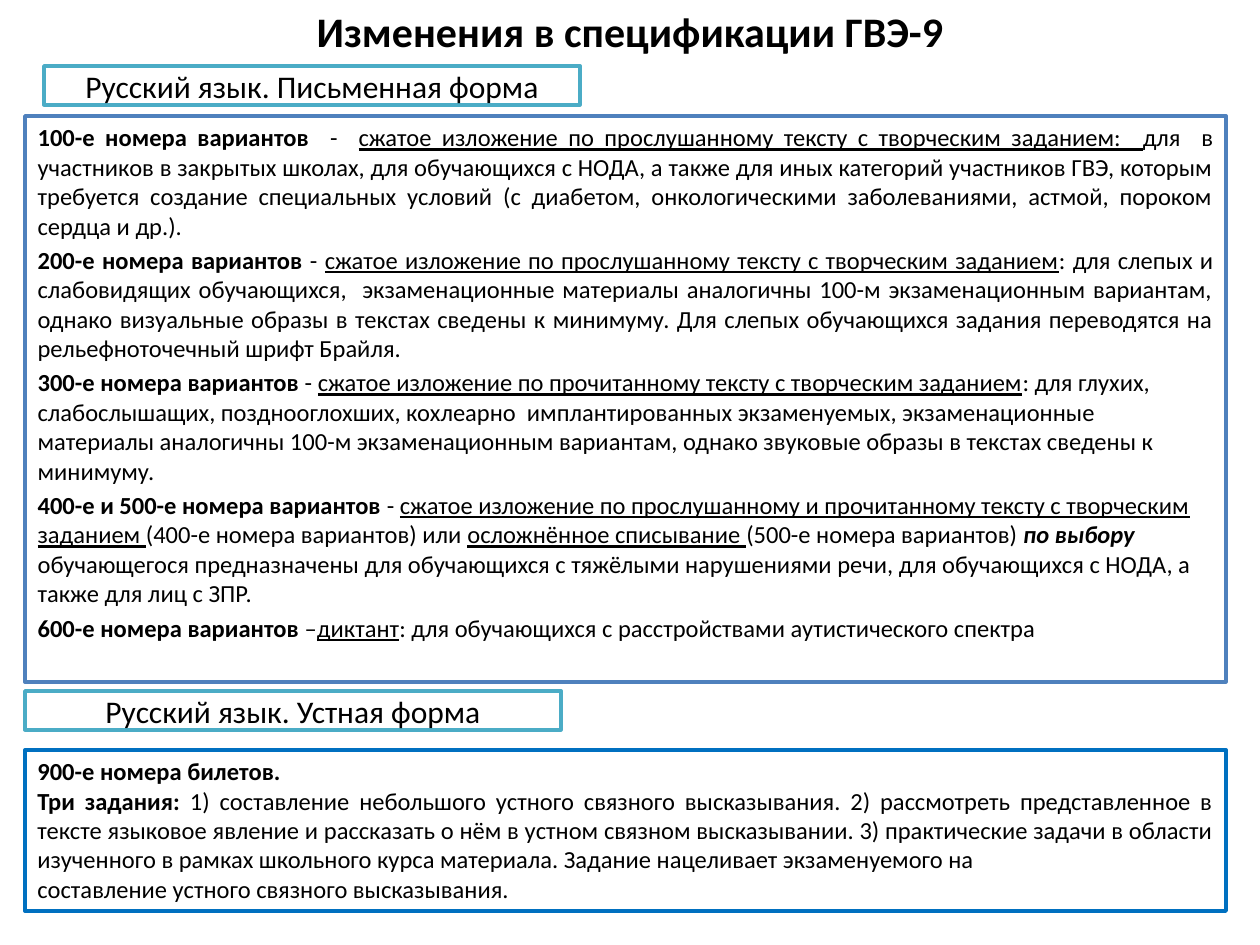
from pptx import Presentation
from pptx import util as u
from pptx.dml.color import RGBColor
from pptx.enum import shapes, text
from lxml import etree

PX = 9144000 // 1260
INK = {"black": "000000", "white": "FFFFFF", "blue": "4F81BD",
       "teal": "4BACC6", "deep": "0070C0"}
MID, JUST, LEFT = text.PP_ALIGN.CENTER, text.PP_ALIGN.JUSTIFY, text.PP_ALIGN.LEFT

WRITTEN = [
    (JUST, [
        ("100-е номера вариантов  ", "b"), ("-  ", ""),
        ("сжатое изложение по прослушанному тексту с творческим заданием:  ", "u"),
        ("для  в участников в закрытых школах, для обучающихся с НОДА, а также "
         "для иных категорий участников ГВЭ, которым требуется создание "
         "специальных условий (с диабетом, онкологическими заболеваниями, "
         "астмой, пороком сердца и др.). ", "")]),
    (JUST, [
        ("200-е номера вариантов", "b"), (" - ", ""),
        ("сжатое изложение по прослушанному тексту с творческим заданием", "u"),
        (": для слепых и слабовидящих обучающихся,  экзаменационные материалы "
         "аналогичны 100-м экзаменационным вариантам, однако визуальные образы "
         "в текстах сведены к минимуму. Для слепых обучающихся задания "
         "переводятся на рельефноточечный шрифт Брайля.", "")]),
    (LEFT, [
        ("300-е номера вариантов ", "b"), ("- ", ""),
        ("сжатое изложение по прочитанному тексту с творческим заданием", "u"),
        (": для глухих, слабослышащих, позднооглохших, кохлеарно  "
         "имплантированных экзаменуемых, экзаменационные материалы аналогичны "
         "100-м экзаменационным вариантам, однако звуковые образы в текстах "
         "сведены к минимуму.", "")]),
    (LEFT, [
        ("400-е и 500-е номера вариантов ", "b"), ("- ", ""),
        ("сжатое изложение по прослушанному и прочитанному тексту с творческим "
         "заданием ", "u"),
        ("(400-е номера вариантов) или ", ""),
        ("осложнённое списывание ", "u"),
        ("(500-е номера вариантов) ", ""), ("по выбору ", "bi"),
        ("обучающегося предназначены для обучающихся с тяжёлыми нарушениями "
         "речи, для обучающихся с НОДА, а также для лиц с ЗПР.", "")]),
    (LEFT, [
        ("600-е номера вариантов ", "b"), ("–", ""), ("диктант", "u"),
        (": для обучающихся с расстройствами аутистического спектра", "")]),
]
ORAL = [
    (JUST, [("900-е номера билетов.", "b")]),
    (JUST, [
        ("Три задания: ", "b"),
        ("1) составление небольшого устного связного высказывания. "
         "2) рассмотреть представленное в тексте языковое явление и рассказать "
         "о нём в устном связном высказывании. 3) практические задачи в области "
         "изученного в рамках школьного курса материала. Задание нацеливает "
         "экзаменуемого на", "")]),
    (JUST, [("составление устного связного высказывания. ", "")]),
]


def tint(name):
    return RGBColor.from_string(INK[name])


def place(shape, box):
    shape.left, shape.top, shape.width, shape.height = (n * PX for n in box)


def edge(shape, line, width):
    shape.fill.solid()
    shape.fill.fore_color.rgb = tint("white")
    shape.line.color.rgb = tint(line)
    shape.line.width = u.Pt(width)


def write(shape, paras, size, anchor, gap=0):
    frame = shape.text_frame
    frame.word_wrap = True
    frame.auto_size = text.MSO_AUTO_SIZE.NONE
    frame.vertical_anchor = anchor
    for i, (align, runs) in enumerate(paras):
        para = frame.add_paragraph() if i else frame.paragraphs[0]
        para.alignment = align
        para.space_before = u.Pt(gap)
        para.font.name = "Calibri"
        para.font.size = u.Pt(size)
        para.font.color.rgb = tint("black")
        for words, style in runs:
            run = para.add_run()
            run.text = words
            run.font.bold = "b" in style
            run.font.italic = "i" in style
            run.font.underline = "u" in style


def unlist(shape):
    for para in shape.text_frame.paragraphs:
        props = para._p.get_or_add_pPr()
        props.set("marL", "0")
        props.set("indent", "0")
        tag = "{http://schemas.openxmlformats.org/drawingml/2006/main}"
        none = etree.Element(tag + "buNone")
        props.find(tag + "defRPr").addprevious(none)


def panel(slide, box, line, width):
    shape = slide.shapes.add_shape(
        shapes.MSO_SHAPE.RECTANGLE, *(n * PX for n in box))
    shape.shadow.inherit = False
    edge(shape, line, width)
    return shape


def label(slide, left, top, words):
    shape = panel(slide, (left, top, 536, 39), "teal", 2)
    write(shape, [(MID, [(words, "")])], 18, text.MSO_ANCHOR.MIDDLE)


def main():
    deck = Presentation()
    deck.slide_width, deck.slide_height = 1260 * PX, 945 * PX
    slide = deck.slides.add_slide(deck.slide_layouts[1])
    title, body = slide.placeholders

    place(title, (63, 6, 1134, 49))
    write(title, [(MID, [("Изменения в спецификации ГВЭ-9", "b")])],
          24, text.MSO_ANCHOR.MIDDLE)

    place(body, (25, 116, 1201, 566))
    edge(body, "blue", 2)
    write(body, WRITTEN, 14, text.MSO_ANCHOR.TOP, 2.8)
    unlist(body)

    label(slide, 44, 66, "Русский язык. Письменная форма")
    label(slide, 25, 691, "Русский язык. Устная форма")

    oral = panel(slide, (25, 750, 1201, 161), "deep", 2.25)
    write(oral, ORAL, 14, text.MSO_ANCHOR.TOP)
    deck.save("out.pptx")


if __name__ == "__main__":
    main()
